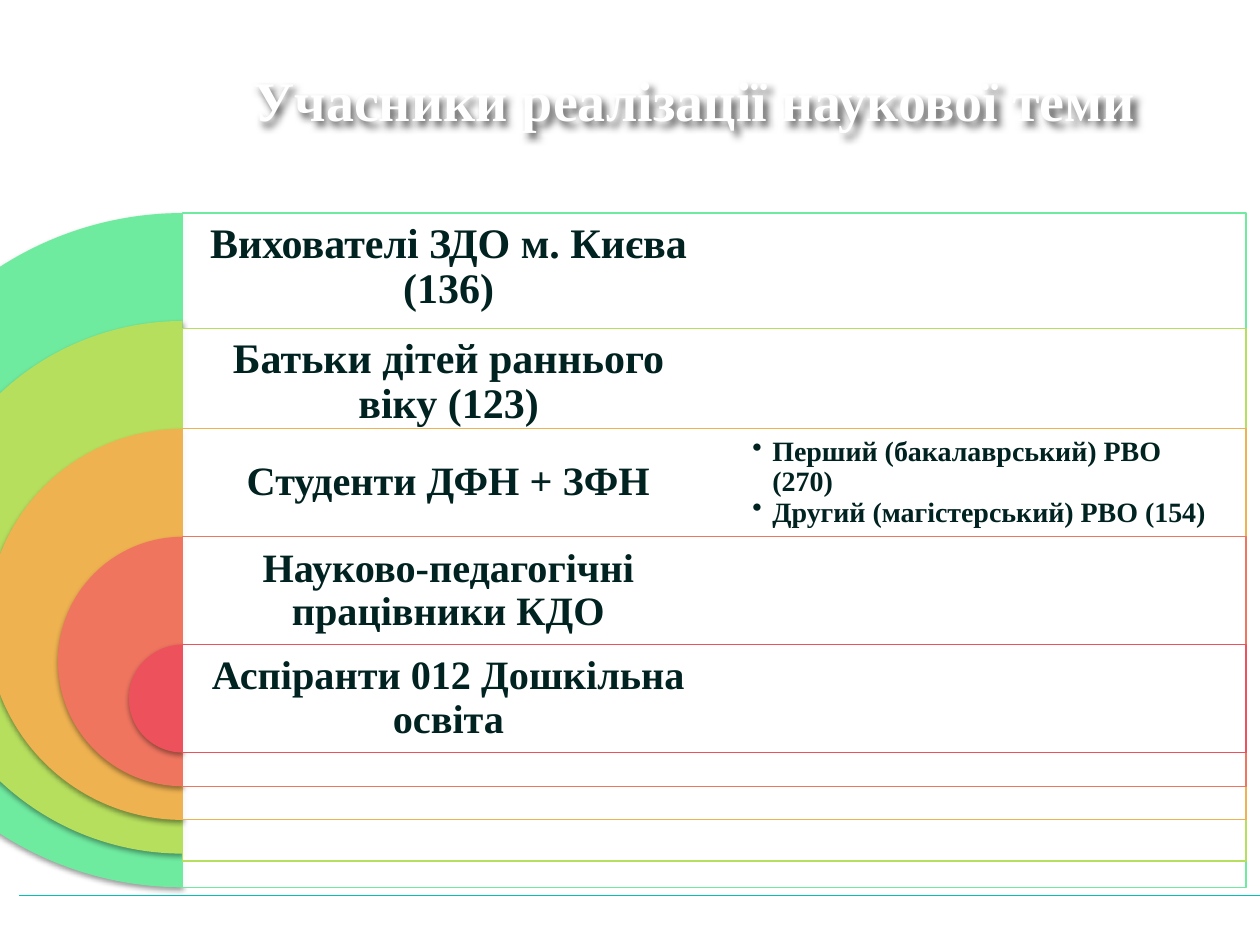
from lxml import etree
from pptx import Presentation
from pptx import util as u
from pptx.dml.color import RGBColor
from pptx.enum import shapes, text
from pptx.oxml import ns

WIDTH, HEIGHT = u.Inches(10), u.Inches(7.5)
FONT = "Times New Roman"
COLOURS = {
    "ink": "002220", "white": "FFFFFF", "black": "000000", "rule": "00C2B7",
    "mint": "6FEBA0", "lime": "B6DF5E", "amber": "EFB251",
    "coral": "EF755F", "rose": "ED515C",
}
GROUPS = [
    ("Вихователі ЗДО м. Києва (136)", 24, "mint", 0, []),
    ("Батьки дітей раннього віку (123)", 24, "lime", 0.07, []),
    ("Студенти ДФН + ЗФН", 23, "amber", 0,
     ["Перший (бакалаврський) РВО (270)", "Другий (магістерський) РВО (154)"]),
    ("Науково-педагогічні працівники КДО", 23, "coral", 0, []),
    ("Аспіранти 012 Дошкільна освіта", 23, "rose", 0, []),
]


def share(left, top, width, height):
    return [int(part * size) for part, size in
            zip((left, top, width, height), (WIDTH, HEIGHT) * 2)]


def colour(name):
    return RGBColor.from_string(COLOURS[name])


def add_element(parent, tag, **attributes):
    return etree.SubElement(parent, ns.qn(tag), attributes)


def add_shadow(shape, blur, distance, angle, opacity):
    effects = add_element(shape._element.spPr, "a:effectLst")
    shadow = add_element(effects, "a:outerShdw", blurRad=str(u.Pt(blur)),
                         dist=str(u.Pt(distance)), dir=str(angle * 60000),
                         algn="ctr", rotWithShape="0")
    tint = add_element(shadow, "a:srgbClr", val=COLOURS["black"])
    add_element(tint, "a:alpha", val=str(opacity * 1000))


def add_run(paragraph, words, size, name):
    run = paragraph.add_run()
    run.text = words
    run.font.name, run.font.size, run.font.bold = FONT, u.Pt(size), True
    run.font.color.rgb = colour(name)


def add_text(slide, box, lines, size, name="ink", inset=0.1, spacing=0.9,
             anchor=text.MSO_ANCHOR.MIDDLE, bullets=False):
    shape = slide.shapes.add_textbox(*box)
    frame = shape.text_frame
    frame.word_wrap = True
    frame.vertical_anchor = anchor
    frame.margin_left = frame.margin_right = u.Inches(inset)
    frame.margin_top = frame.margin_bottom = u.Inches(inset)
    for index, words in enumerate(lines):
        paragraph = frame.paragraphs[0] if index == 0 else frame.add_paragraph()
        paragraph.line_spacing = spacing
        if bullets:
            paragraph.level = 1
            properties = paragraph._p.get_or_add_pPr()
            properties.set("marL", str(u.Inches(0.19)))
            properties.set("indent", str(u.Inches(-0.16)))
            add_element(properties, "a:buChar", char="•")
        else:
            paragraph.alignment = text.PP_ALIGN.CENTER
        add_run(paragraph, words, size, name)
    return shape


def add_half_disc(slide, box, name):
    disc = slide.shapes.add_shape(shapes.MSO_SHAPE.PIE, *box)
    disc.adjustments[0], disc.adjustments[1] = 54, 162
    disc.fill.solid()
    disc.fill.fore_color.rgb = colour(name)
    disc.line.fill.background()
    add_shadow(disc, 3.1, 1.6, 90, 38)


def add_panel(slide, box, name):
    panel = slide.shapes.add_shape(shapes.MSO_SHAPE.RECTANGLE, *box)
    panel.shadow.inherit = False
    panel.fill.solid()
    panel.fill.fore_color.rgb = colour("white")
    tint = panel._element.spPr.find(ns.qn("a:solidFill"))[0]
    add_element(tint, "a:alpha", val="90000")
    panel.line.color.rgb = colour(name)
    panel.line.width = u.Pt(0.75)


def add_target_list(slide, box):
    left, top, width, height = box
    row = int(height * 0.16)
    shrink = (height - row) // (len(GROUPS) - 1)
    column = width // 2
    for index, (label, size, name, drop, details) in enumerate(GROUPS):
        diameter = height - index * shrink
        disc_top = top + index * row
        row_top = disc_top + int(drop * row)
        add_half_disc(slide, (left - diameter // 2, disc_top, diameter, diameter), name)
        add_panel(slide, (left, row_top, width, diameter), name)
        add_text(slide, (left, row_top, column, row), [label], size)
        if details:
            add_text(slide, (left + column, row_top, column, row), details, 16,
                     inset=0.27, bullets=True)


def add_title(slide, box):
    title = add_text(slide, box, ["Учасники реалізації наукової теми"], 32, "white",
                     inset=0.05, spacing=1, anchor=text.MSO_ANCHOR.BOTTOM)
    add_shadow(title, 4, 3, 60, 60)


def add_rule(slide, box):
    left, top, width, height = box
    rule = slide.shapes.add_connector(shapes.MSO_CONNECTOR.STRAIGHT,
                                      left, top, left + width, top + height)
    rule.line.color.rgb = colour("rule")
    rule.line.width = u.Pt(0.75)
    add_element(rule._element.spPr, "a:effectLst")


def main():
    presentation = Presentation()
    presentation.slide_width, presentation.slide_height = WIDTH, HEIGHT
    slide = presentation.slides.add_slide(presentation.slide_layouts[6])
    add_rule(slide, share(0.015, 0.948, 0.985, 0))
    add_target_list(slide, share(0.145, 0.2255, 0.844, 0.7135))
    add_title(slide, share(0.128, 0.048, 0.847, 0.099))
    presentation.save("out.pptx")


if __name__ == "__main__":
    main()
